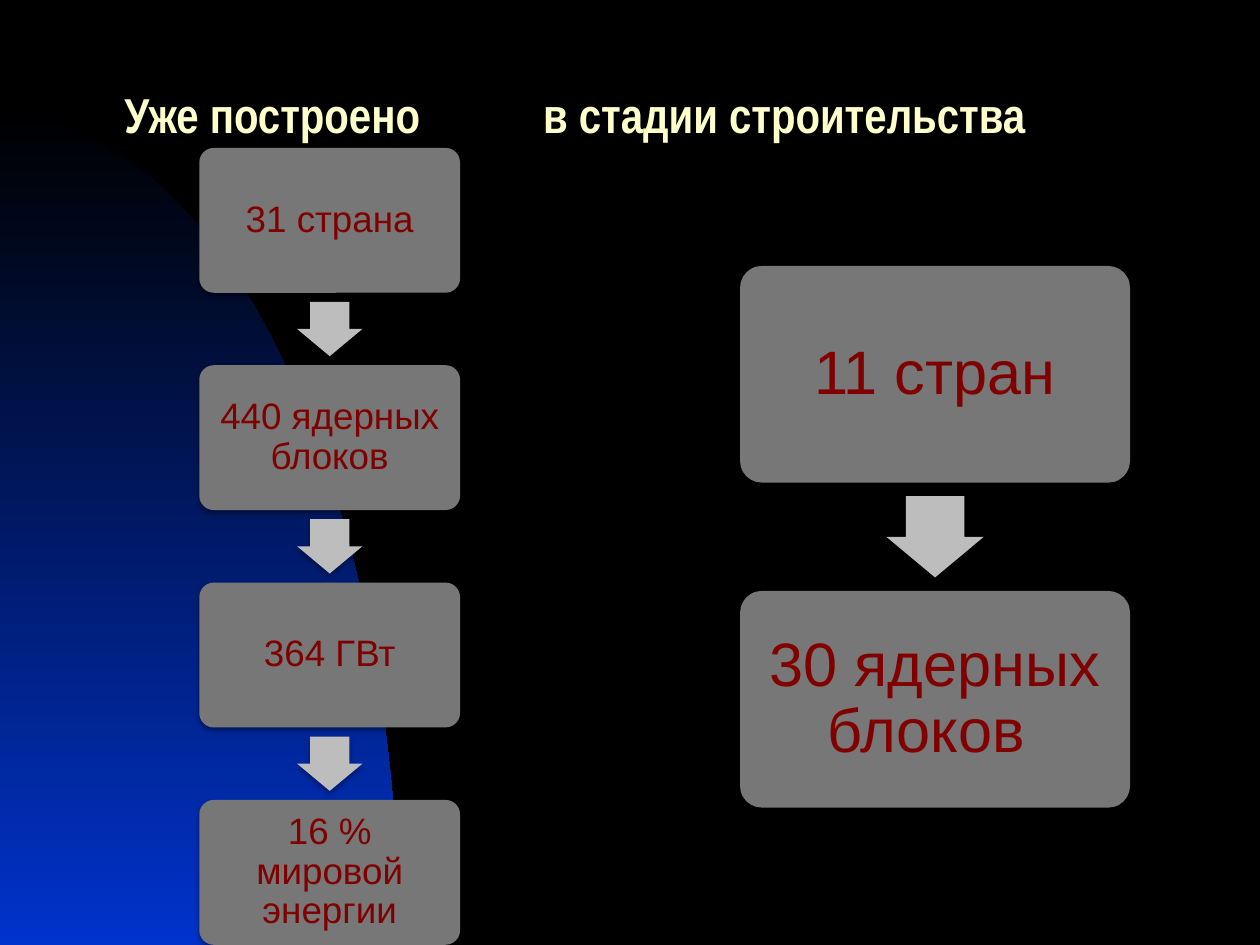
"""Build a slide comparing nuclear power units in service and under construction."""
import math

from lxml import etree
from pptx import Presentation
from pptx.dml.color import RGBColor
from pptx.enum.shapes import MSO_SHAPE
from pptx.enum.text import MSO_ANCHOR, PP_ALIGN
from pptx.oxml.ns import qn
from pptx.util import Pt

ROUNDED = MSO_SHAPE.ROUNDED_RECTANGLE
ARROW = MSO_SHAPE.RIGHT_ARROW
MIDDLE = MSO_ANCHOR.MIDDLE
LEFT, CENTER = PP_ALIGN.LEFT, PP_ALIGN.CENTER
WIDTH, HEIGHT = 720, 540


def rgb(value):
    return RGBColor.from_string(value)


class Deck:
    black = "000000"
    blue = "0033CC"
    box_fill = "777777"
    arrow_fill = "BDBDBD"
    box_text = "800000"
    title_text = "FFFFCC"
    box_font = "Arial"
    title_font = "Arial Narrow"

    def __init__(self):
        self.prs = Presentation()
        self.prs.slide_width, self.prs.slide_height = Pt(WIDTH), Pt(HEIGHT)
        self.s = self.prs.slides.add_slide(self.prs.slide_layouts[5])
        fill = self.s.background.fill
        fill.solid()
        fill.fore_color.rgb = rgb(self.black)

    def style_text(self, tf, align, spacing, font, size, color, bold):
        tf.word_wrap = True
        tf.vertical_anchor = MIDDLE
        p = tf.paragraphs[0]
        p.alignment = align
        p.line_spacing = spacing
        for r in p.runs:
            r.font.name = font
            r.font.size = Pt(size)
            r.font.bold = bold
            r.font.color.rgb = rgb(color)

    def arc(self, width, top, steps=60):
        angles = [math.pi / 2 * i / steps for i in range(steps + 1)]
        points = [(Pt(width * math.sin(a)), Pt(HEIGHT - (HEIGHT - top) * math.cos(a)))
                  for a in angles]
        builder = self.s.shapes.build_freeform(*points[0])
        builder.add_line_segments(points[1:] + [(0, Pt(HEIGHT))], close=True)
        sp = builder.convert_to_shape()
        sp.shadow.inherit = False
        sp.line.fill.background()
        sp.fill.gradient()
        sp.fill.gradient_angle = 270
        for stop, color in zip(sp.fill.gradient_stops, (self.black, self.blue)):
            stop.color.rgb = rgb(color)

    def title(self, text, top, height, indent, tab):
        sp = self.s.shapes.title
        sp.left, sp.top, sp.width, sp.height = 0, Pt(top), Pt(WIDTH), Pt(height)
        tf = sp.text_frame
        tf.text = text
        tf.margin_left = Pt(indent)
        self.style_text(tf, LEFT, 0.7, self.title_font, 28, self.title_text, True)
        tabs = etree.SubElement(tf.paragraphs[0]._p.get_or_add_pPr(), qn("a:tabLst"))
        etree.SubElement(tabs, qn("a:tab"), pos=str(Pt(tab)), algn="l")

    def shape(self, kind, left, top, width, height, color, adjustments, opacity):
        sp = self.s.shapes.add_shape(kind, Pt(left), Pt(top), Pt(width), Pt(height))
        for i, value in enumerate(adjustments):
            sp.adjustments[i] = value
        sp.fill.solid()
        sp.fill.fore_color.rgb = rgb(color)
        sp.line.fill.background()
        sp.shadow.inherit = False
        effects = sp._element.spPr.find(qn("a:effectLst"))
        shadow = etree.SubElement(effects, qn("a:outerShdw"), blurRad=str(Pt(3.1)),
                                  dist=str(Pt(1.7)), dir="5400000", rotWithShape="0")
        shade = etree.SubElement(shadow, qn("a:srgbClr"), val=self.black)
        etree.SubElement(shade, qn("a:alpha"), val=str(opacity * 1000))
        return sp

    def box(self, text, left, top, width, height, size):
        sp = self.shape(ROUNDED, left, top, width, height, self.box_fill, [0.1], 38)
        tf = sp.text_frame
        tf.text = text
        tf.margin_left = tf.margin_right = Pt(size * 0.3)
        tf.margin_top = tf.margin_bottom = Pt(size * 0.3)
        self.style_text(tf, CENTER, 0.9, self.box_font, size, self.box_text, False)

    def arrow(self, center_x, center_y, length, width):
        sp = self.shape(ARROW, center_x - length / 2, center_y - width / 2,
                        length, width, self.arrow_fill, [0.6, 0.5], 35)
        sp.rotation = 90

    def chain(self, labels, left, top, height, size):
        width = 1.8 * height
        for i, label in enumerate(labels):
            y = top + 1.5 * height * i
            if i:
                self.arrow(left + width / 2, y - height / 4, 0.375 * height, 0.45 * height)
            self.box(label, left, y, width, height, size)


def main():
    deck = Deck()
    deck.arc(228, 66)
    deck.title("Уже построено\tв стадии строительства", 36, 66, 71, 239.3)
    deck.chain(["31 страна", "440 ядерных блоков", "364 ГВт", "16 % мировой энергии"],
               113.9, 84.5, 82.8, 21)
    deck.chain(["11 стран", "30 ядерных блоков "], 422.9, 152, 123.8, 35)
    deck.prs.save("out.pptx")


if __name__ == "__main__":
    main()
